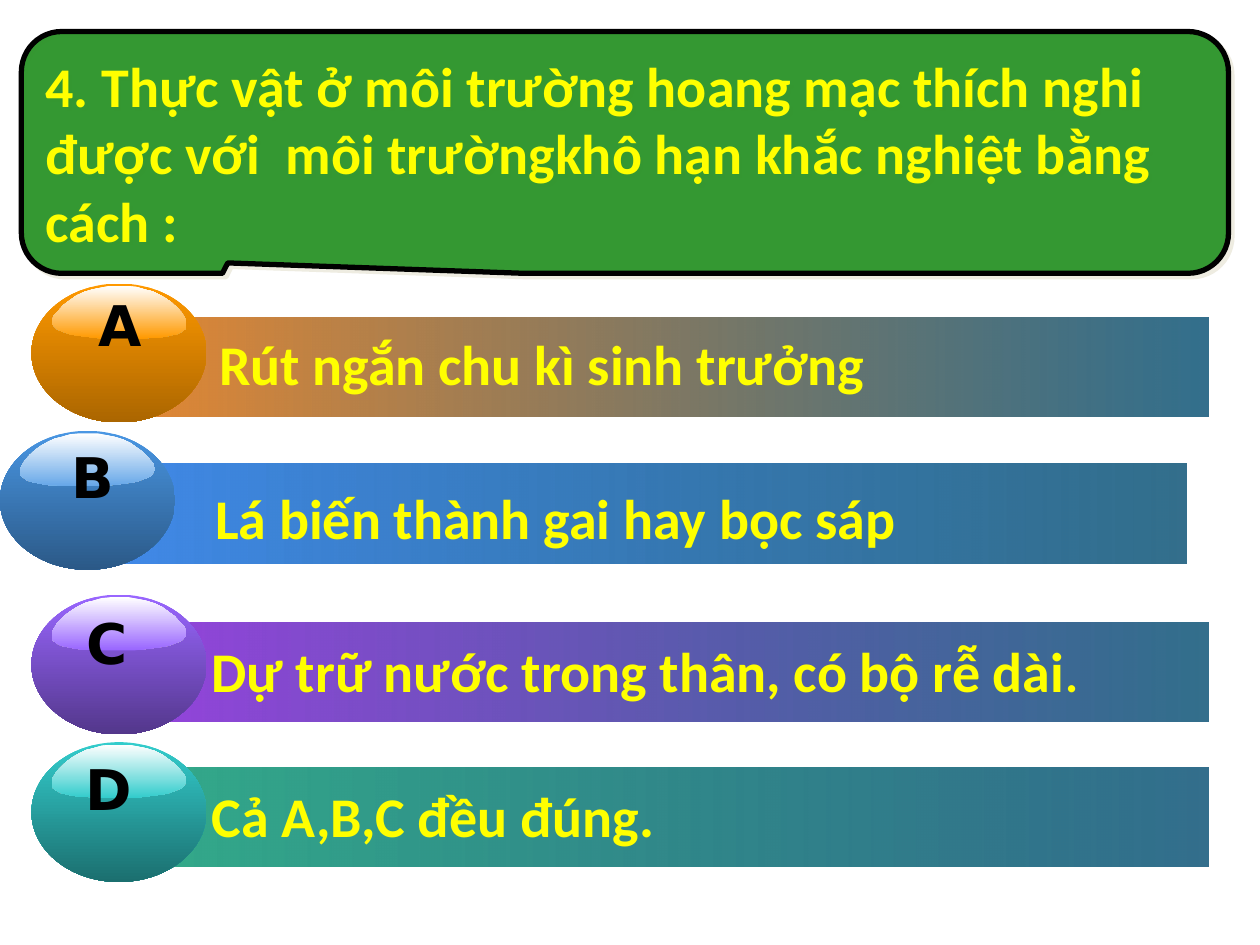
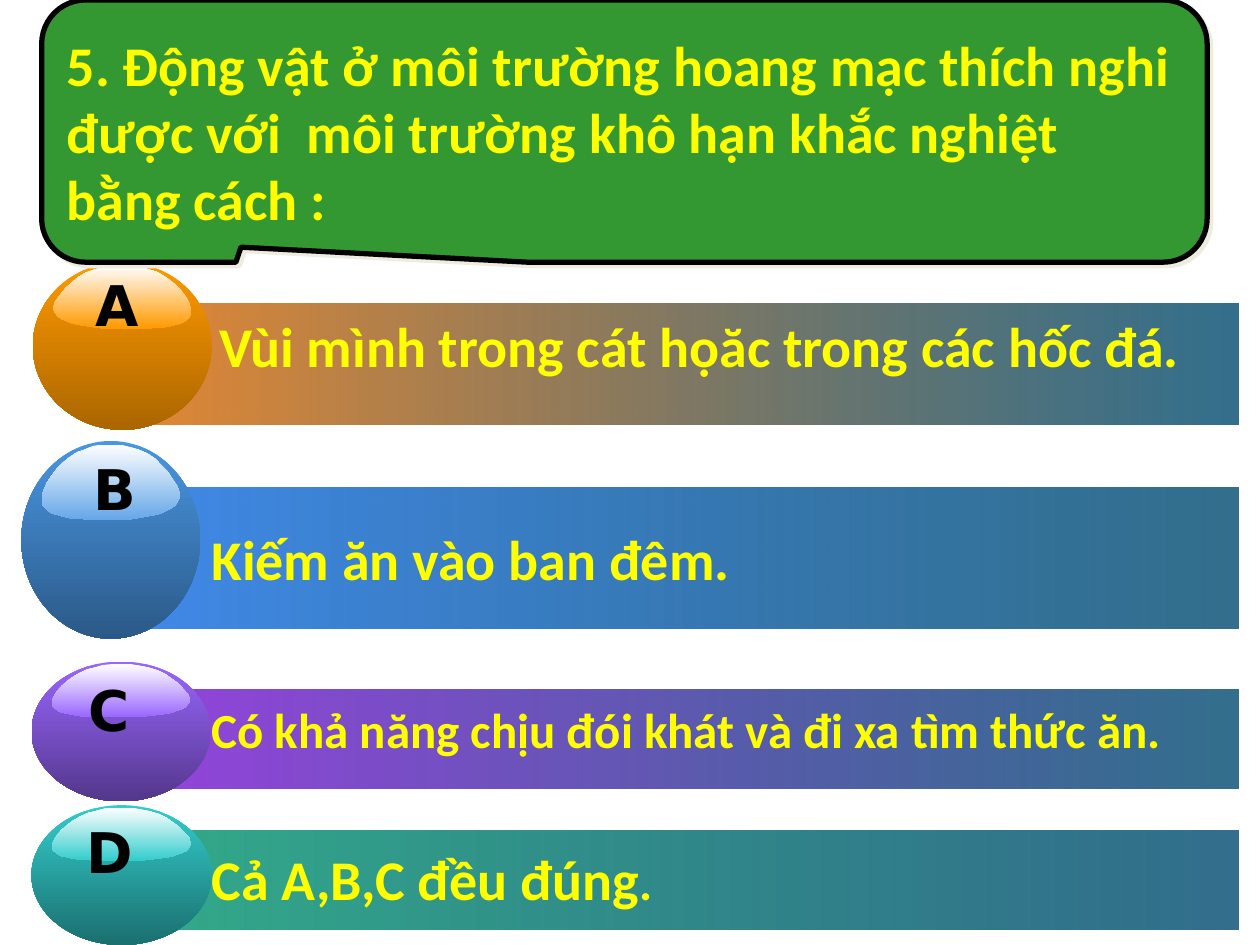
import pptx
import pptx.dml.color
import pptx.enum.shapes
import pptx.enum.text
import pptx.oxml
import pptx.oxml.ns
import pptx.util

Pt = pptx.util.Pt
RGBColor = pptx.dml.color.RGBColor
Shapes = pptx.enum.shapes.MSO_SHAPE
qn = pptx.oxml.ns.qn

WHITE = RGBColor(0xFF, 0xFF, 0xFF)
BLACK = RGBColor(0x00, 0x00, 0x00)
YELLOW = RGBColor(0xFF, 0xFF, 0x00)
GREEN = RGBColor(0x00, 0x80, 0x00)
BAR_END = RGBColor(0x00, 0x4B, 0x70)

# letter: bar colour, ball colour, gloss colour, ball shade in percent, letter box width
STYLES = {
    "A": (RGBColor(0xE9, 0x89, 0x31), RGBColor(0xFF, 0x99, 0x00),
          RGBColor(0xFF, 0x99, 0x00), 40, 39.6),
    "B": (RGBColor(0x41, 0x8A, 0xEB), RGBColor(0x49, 0x96, 0xE3),
          RGBColor(0x66, 0xA7, 0xE8), 30.6, 38.9),
    "C": (RGBColor(0x99, 0x42, 0xE0), RGBColor(0x99, 0x66, 0xFF),
          RGBColor(0x99, 0x66, 0xFF), 25.1, 37.4),
    "D": (RGBColor(0x33, 0xAD, 0x8A), RGBColor(0x33, 0xCC, 0xCC),
          RGBColor(0x33, 0xCC, 0xCC), 25.1, 41),
}

# Outline of the gloss on a ball, on a grid of 110 by 59
GLOSS_WIDTH, GLOSS_HEIGHT = 110, 59
GLOSS = [
    (108, 33), (109, 36), (110, 40), (109, 43), (108, 45), (106, 48), (103, 50),
    (99, 52), (95, 54), (91, 55), (86, 56), (80, 57), (74, 58), (68, 59), (39, 59),
    (29, 58), (24, 58), (19, 57), (15, 56), (12, 55), (8, 54), (5, 52), (3, 50),
    (1, 48), (0, 46), (0, 40), (1, 37), (4, 30), (8, 24), (12, 19), (17, 14),
    (22, 10), (28, 6), (34, 4), (41, 1), (48, 0), (63, 0), (70, 2), (77, 4),
    (84, 7), (90, 11), (95, 16), (100, 21), (104, 27),
]

# Each row: letter, bar (left, top, width, height), ball (left, top, width, height),
# letter (left, top), answer (left, top, width), answer spans (text, size)
QUESTIONS = [
    {
        "text": "4. Thực vật ở môi trường hoang mạc thích nghi được với  "
                "môi trườngkhô hạn khắc nghiệt bằng cách :",
        "callout": (12.2, 18, 689.8, 138.2),
        "tip": 0.457,
        "rows": [
            ("A", (59.8, 181.4, 630.7, 56.9), (18, 162, 100, 79.4), (49, 162.7),
             (118.1, 185, 511.2), [("Rút ngắn chu kì sinh trưởng", 32)]),
            ("B", (49, 265, 629.3, 56.9), (0, 246.2, 100, 79.4), (33.8, 249.1),
             (115.9, 272.9, 478), [("Lá biến thành gai hay bọc sáp", 32)]),
            ("C", (59.8, 355.7, 630.7, 56.9), (18, 339.8, 100, 79.9), (42.5, 344.2),
             (113.8, 360, 570.2),
             [("Dự trữ nước trong thân, có bộ rễ dài", 32), (".", 28)]),
            ("D", (59.8, 438.5, 630.7, 56.9), (18, 424.1, 100, 79.9), (41.8, 427.7),
             (113.8, 442.8, 455.8), [("Cả A,B,C đều đúng.", 32)]),
        ],
    },
    {
        "text": "5. Động vật ở môi trường hoang mạc thích nghi được với  "
                "môi trường khô hạn khắc nghiệt bằng cách :",
        "callout": (23.8, 0, 666, 149.8),
        "tip": 0.443,
        "rows": [
            ("A", (60.5, 173.5, 647.3, 69.1), (18.7, 149.8, 102.2, 95.8), (47.5, 151.2),
             (118.1, 174.2, 589.7), [("Vùi mình trong cát họăc trong các hốc đá.", 32)]),
            ("B", (61.9, 278.6, 645.8, 80.6), (12.2, 252, 102.2, 113), (46.1, 256.3),
             (113.8, 295.9, 480.2), [("Kiếm ăn vào ban đêm.", 32)]),
            ("C", (60.5, 393.8, 647.3, 56.9), (18, 378, 102.2, 79.9), (43.2, 382.3),
             (113.8, 396, 606.2),
             [("Có khả năng chịu đói khát và đi xa tìm thức ăn.", 28)]),
            ("D", (60.5, 474.5, 647.3, 56.9), (18, 460.1, 103, 79.9), (42.5, 463.7),
             (113.8, 478.8, 455.8), [("Cả A,B,C đều đúng", 32), (".", 28)]),
        ],
    },
]


def paint(shape, colors, angle=0, change=None, percent=0):
    """Fill without line or shadow; `change` (alpha, shade) acts on the last colour."""
    shape.shadow.inherit = False
    shape.line.fill.background()
    if len(colors) == 1:
        shape.fill.solid()
        shape.fill.fore_color.rgb = colors[0]
    else:
        shape.fill.gradient()
        shape.fill.gradient_angle = angle
        for stop, color, position in zip(shape.fill.gradient_stops, colors, (0, 1)):
            stop.color.rgb = color
            stop.position = position
    if change:
        last = list(shape.element.spPr.iter(qn("a:srgbClr")))[-1]
        last.append(pptx.oxml.parse_xml(
            f'<a:{change} {pptx.oxml.ns.nsdecls("a")} val="{round(percent * 1000)}"/>'))


def write(box, spans, font_name, color):
    """Put bold, left-aligned spans of (text, size) into the box."""
    para = box.text_frame.paragraphs[0]
    para.alignment = pptx.enum.text.PP_ALIGN.LEFT
    para.font.name, para.font.bold = font_name, True
    para.font.color.rgb = color
    para.font.size = Pt(spans[0][1])
    for text, size in spans:
        span = para.add_run()
        span.text = text
        if size != spans[0][1]:
            span.font.size = Pt(size)


deck = pptx.Presentation()
deck.slide_width, deck.slide_height = Pt(720), Pt(540)

for question in QUESTIONS:
    page = deck.slides.add_slide(deck.slide_layouts[6])

    for letter, bar_area, ball_area, letter_place, _, _ in question["rows"]:
        bar_color, ball_color, gloss_color, shade, letter_width = STYLES[letter]
        group = page.shapes.add_group_shape()

        bar = group.shapes.add_shape(Shapes.RECTANGLE, *map(Pt, bar_area))
        paint(bar, (bar_color, BAR_END), 0, "alpha", 80)

        ball = group.shapes.add_shape(Shapes.OVAL, *map(Pt, ball_area))
        paint(ball, (ball_color, ball_color), 270, "shade", shade)

        left, top, width, height = ball_area
        points = GLOSS
        if letter == "A":
            points = [(GLOSS_WIDTH - x, y) for x, y in GLOSS]
        scale = (Pt(width * 0.772) / GLOSS_WIDTH, Pt(height * 0.38) / GLOSS_HEIGHT)
        outline = group.shapes.build_freeform(*points[0], scale=scale)
        outline.add_line_segments(points[1:], close=True)
        gloss = outline.convert_to_shape(Pt(left + width * 0.115), Pt(top + height * 0.018))
        paint(gloss, (WHITE, gloss_color), 270)

        label = group.shapes.add_textbox(*map(Pt, (*letter_place, letter_width, 45.4)))
        label.text_frame.word_wrap = False
        label.text_frame.auto_size = pptx.enum.text.MSO_AUTO_SIZE.SHAPE_TO_FIT_TEXT
        write(label, [(letter, 32)], "DejaVu Sans", BLACK)

    callout = page.shapes.add_shape(
        Shapes.ROUNDED_RECTANGULAR_CALLOUT, *map(Pt, question["callout"]))
    for index, value in enumerate((-0.329, question["tip"], 0.167)):
        callout.adjustments[index] = value
    paint(callout, (GREEN,), 0, "alpha", 78)
    callout.line.color.rgb = BLACK
    callout.line.width = Pt(3)
    callout.element.spPr.find(qn("a:effectLst")).append(pptx.oxml.parse_xml(
        f'<a:outerShdw {pptx.oxml.ns.nsdecls("a")} blurRad="0" dist="{Pt(2.8)}" '
        'dir="2700000" algn="ctr" rotWithShape="0"><a:srgbClr val="EEECE1"/></a:outerShdw>'))
    callout.text_frame.word_wrap = True
    callout.text_frame.vertical_anchor = pptx.enum.text.MSO_ANCHOR.MIDDLE
    write(callout, [(question["text"], 32)], "Calibri", YELLOW)

    for _, _, _, _, answer_area, spans in question["rows"]:
        answer = page.shapes.add_textbox(*map(Pt, (*answer_area, spans[0][1] * 1.42)))
        answer.text_frame.word_wrap = True
        answer.text_frame.auto_size = pptx.enum.text.MSO_AUTO_SIZE.SHAPE_TO_FIT_TEXT
        write(answer, spans, "Calibri", YELLOW)

deck.save("out.pptx")
